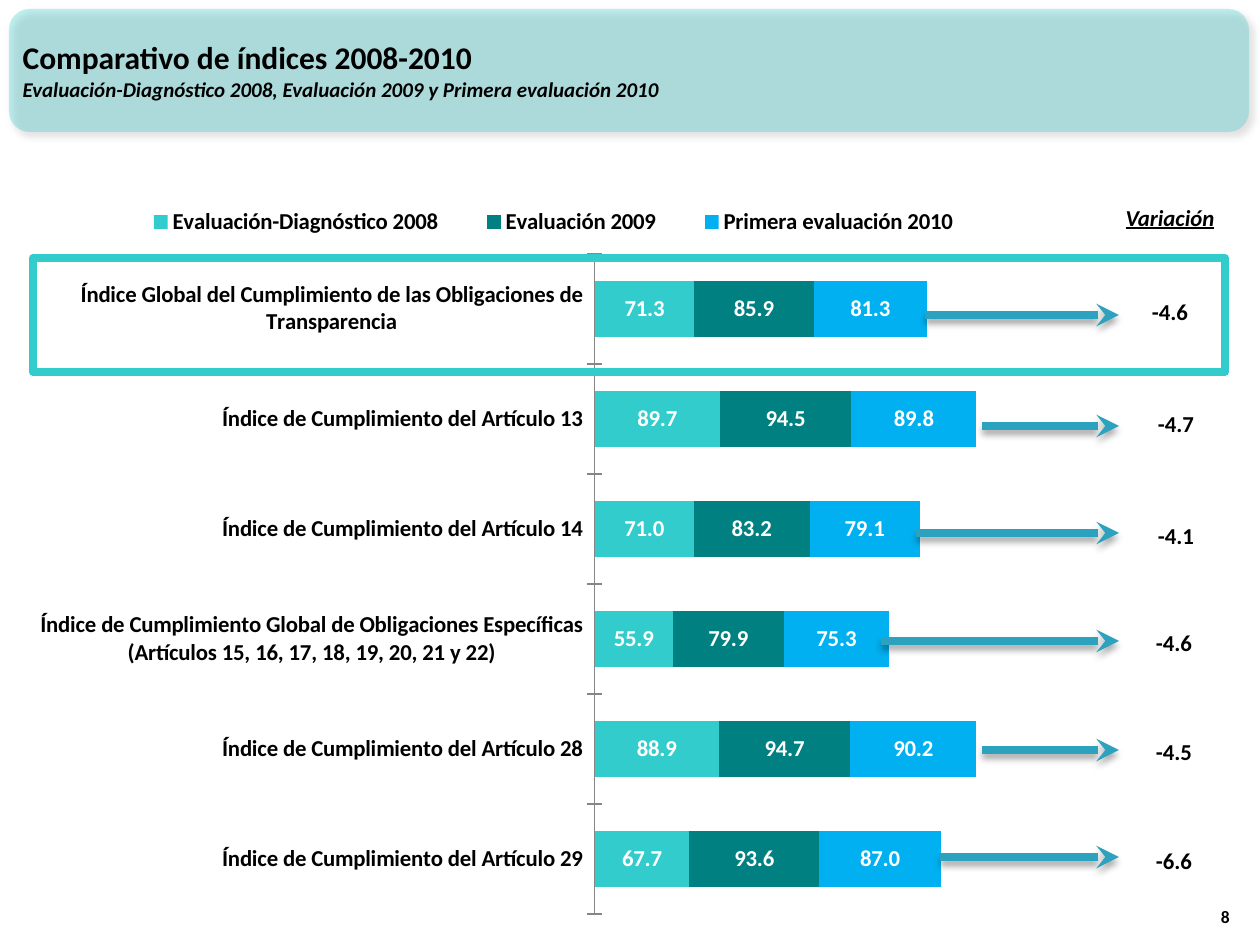
import pptx
import pptx.chart.data
import pptx.dml.color
import pptx.enum.chart
import pptx.enum.dml
import pptx.enum.shapes
import pptx.enum.text
import pptx.oxml
import pptx.oxml.ns
import pptx.util

RGB = pptx.dml.color.RGBColor
ALIGN = pptx.enum.text.PP_ALIGN
ANCHOR = pptx.enum.text.MSO_ANCHOR
qn = pptx.oxml.ns.qn

BLACK = RGB(0, 0, 0)
WHITE = RGB(255, 255, 255)
TURQUOISE = RGB(0x33, 0xCC, 0xCC)
TEAL = RGB(0x00, 0x80, 0x80)
SKY = RGB(0x00, 0xB0, 0xF0)
ARROW_BLUE = RGB(0x2D, 0xA2, 0xBF)
AXIS_GREY = RGB(0x86, 0x86, 0x86)
FONT = "Calibri"

TITLE = "Comparativo de índices 2008-2010"
SUBTITLE = "Evaluación-Diagnóstico 2008, Evaluación 2009 y Primera evaluación 2010"
VARIATION_HEADING = "Variación"
PAGE_NUMBER = "8"
INDICES = [
    "Índice Global del Cumplimiento de las Obligaciones de Transparencia",
    "Índice de Cumplimiento del Artículo 13",
    "Índice de Cumplimiento del Artículo 14",
    "Índice de Cumplimiento Global de Obligaciones Específicas\n"
    "(Artículos 15, 16, 17, 18, 19, 20, 21 y 22)",
    "Índice de Cumplimiento del Artículo 28",
    "Índice de Cumplimiento del Artículo 29",
]
EVALUATIONS = [
    ("Evaluación-Diagnóstico 2008", TURQUOISE, (71.3, 89.7, 71.0, 55.9, 88.9, 67.7)),
    ("Evaluación 2009", TEAL, (85.9, 94.5, 83.2, 79.9, 94.7, 93.6)),
    ("Primera evaluación 2010", SKY, (81.3, 89.8, 79.1, 75.3, 90.2, 87.0)),
]
# variation, its centre (x, y), arrow start x, arrow y
VARIATIONS = [
    ("-4.6", 1170, 311, 925, 315),
    ("-4.7", 1176, 423, 982, 426),
    ("-4.1", 1176, 535, 916, 533),
    ("-4.6", 1174, 642, 881, 641),
    ("-4.5", 1174, 751, 982, 750),
    ("-6.6", 1174, 860, 940, 857),
]
ARROW_END = 1119
CHART_BOX = (20, 193, 1014, 736)
PLOT_BOX = (595, 254, 418, 660)
LEGEND_BOX = (112, 207, 882, 30)


def px(*lengths):
    return [pptx.util.Emu(round(n * 914400 / 126)) for n in lengths]


def style(font, size, color=BLACK, italic=False):
    font.name, font.size, font.bold, font.italic = FONT, pptx.util.Pt(size), True, italic
    font.color.rgb = color


def add_label(slide, box, text, size, align=ALIGN.CENTER, anchor=ANCHOR.MIDDLE, italic=False):
    frame = slide.shapes.add_textbox(*px(*box)).text_frame
    frame.word_wrap = True
    frame.vertical_anchor = anchor
    paragraph = frame.paragraphs[0]
    paragraph.text = text
    paragraph.alignment = align
    style(paragraph.font, size, italic=italic)
    return paragraph


def cast_shadow(shape, opacity, degrees):
    """Give the shape one soft black shadow; call after its line is set."""
    shape._element.spPr.append(pptx.oxml.parse_xml(
        f'<a:effectLst {pptx.oxml.ns.nsdecls("a")}>'
        f'<a:outerShdw blurRad="50800" dist="38100" dir="{degrees * 60000}" rotWithShape="0">'
        f'<a:srgbClr val="000000"><a:alpha val="{opacity * 1000}"/></a:srgbClr>'
        '</a:outerShdw></a:effectLst>'))


def layout_xml(box, inner=False):
    left, top, width, height = CHART_BOX
    fractions = {"x": (box[0] - left) / width, "y": (box[1] - top) / height,
                 "w": box[2] / width, "h": box[3] / height}
    target = '<c:layoutTarget val="inner"/>' if inner else ""
    modes = '<c:xMode val="edge"/><c:yMode val="edge"/>'
    sizes = "".join(f'<c:{key} val="{value:.3f}"/>' for key, value in fractions.items())
    return pptx.oxml.parse_xml(
        f'<c:layout {pptx.oxml.ns.nsdecls("c")}><c:manualLayout>'
        f'{target}{modes}{sizes}</c:manualLayout></c:layout>')


def add_banner(slide):
    banner = slide.shapes.add_shape(
        pptx.enum.shapes.MSO_SHAPE.ROUNDED_RECTANGLE, *px(9, 9, 1240, 123))
    banner.fill.solid()
    banner.fill.fore_color.rgb = TURQUOISE
    color = banner._element.spPr.find(".//" + qn("a:srgbClr"))
    color.append(pptx.oxml.parse_xml(
        f'<a:alpha {pptx.oxml.ns.nsdecls("a")} val="30000"/>'))
    banner.line.fill.background()
    cast_shadow(banner, 40, 45)

    title = slide.shapes.title
    title.left, title.top, title.width, title.height = px(10, 11, 1155, 118)
    frame = title.text_frame
    frame.text = f"{TITLE}\n{SUBTITLE}"
    frame.word_wrap = True
    frame.auto_size = pptx.enum.text.MSO_AUTO_SIZE.NONE
    frame.vertical_anchor = ANCHOR.MIDDLE
    for paragraph, size, italic in zip(frame.paragraphs, (18, 12), (False, True)):
        paragraph.alignment = ALIGN.LEFT
        style(paragraph.font, size, italic=italic)
    banner._element.addnext(title._element)


def add_index_chart(slide):
    data = pptx.chart.data.CategoryChartData(number_format="0.0")
    data.categories = INDICES
    for name, _, values in EVALUATIONS:
        data.add_series(name, values)
    chart = slide.shapes.add_chart(
        pptx.enum.chart.XL_CHART_TYPE.BAR_STACKED, *px(*CHART_BOX), data).chart
    style(chart.font, 13)
    chart.has_title = False
    chart.has_legend = True
    chart.legend.position = pptx.enum.chart.XL_LEGEND_POSITION.TOP
    chart.legend.include_in_layout = False
    style(chart.legend.font, 13)
    legend = chart.legend._element
    for old in legend.findall(qn("c:layout")):
        legend.remove(old)
    legend.find(qn("c:legendPos")).addnext(layout_xml(LEGEND_BOX))

    plot = chart.plots[0]
    plot.gap_width, plot.overlap, plot.vary_by_categories = 95, 100, False
    for series, (_, color, _) in zip(plot.series, EVALUATIONS):
        series.format.fill.solid()
        series.format.fill.fore_color.rgb = color
        labels = series.data_labels
        labels.show_value = True
        labels.number_format, labels.number_format_is_linked = "0.0", False
        style(labels.font, 13, WHITE)

    indices = chart.category_axis
    indices.reverse_order = True
    indices.major_tick_mark = pptx.enum.chart.XL_TICK_MARK.CROSS
    indices.format.line.color.rgb = AXIS_GREY
    style(indices.tick_labels.font, 13)
    scores = chart.value_axis
    scores.minimum_scale, scores.maximum_scale, scores.major_unit = 0, 300, 100
    scores.has_major_gridlines = False
    scores.visible = False

    plot_area = chart._chartSpace.chart.plotArea
    for old in plot_area.findall(qn("c:layout")):
        plot_area.remove(old)
    plot_area.insert(0, layout_xml(PLOT_BOX, inner=True))


def add_arrow(slide, start, y):
    arrow = slide.shapes.add_connector(
        pptx.enum.shapes.MSO_CONNECTOR.STRAIGHT, *px(start, y, ARROW_END, y))
    arrow.line.color.rgb = ARROW_BLUE
    arrow.line.width = pptx.util.Pt(4.33)
    arrow._element.spPr.find(qn("a:ln")).append(pptx.oxml.parse_xml(
        f'<a:tailEnd {pptx.oxml.ns.nsdecls("a")} type="stealth"/>'))
    cast_shadow(arrow, 35, 90)


def add_highlight(slide):
    highlight = slide.shapes.add_shape(
        pptx.enum.shapes.MSO_SHAPE.RECTANGLE, *px(33, 258, 1192, 114))
    highlight.fill.background()
    highlight.line.color.rgb = TURQUOISE
    highlight.line.width = pptx.util.Pt(4.5)
    highlight.shadow.inherit = False


def main():
    deck = pptx.Presentation()
    deck.slide_width, deck.slide_height = px(1260, 945)
    slide = deck.slides.add_slide(deck.slide_layouts[5])
    add_banner(slide)
    add_index_chart(slide)
    heading = add_label(slide, (1096, 197, 148, 40), VARIATION_HEADING, 13, italic=True)
    heading.font.underline = True
    for variation, x, y, arrow_start, arrow_y in VARIATIONS:
        add_label(slide, (x - 50, y - 20, 100, 40), variation, 13)
        add_arrow(slide, arrow_start, arrow_y)
    add_label(slide, (1192, 883, 50, 50), PAGE_NUMBER, 10, ALIGN.RIGHT, ANCHOR.BOTTOM)
    add_highlight(slide)
    deck.save("out.pptx")


if __name__ == "__main__":
    main()
